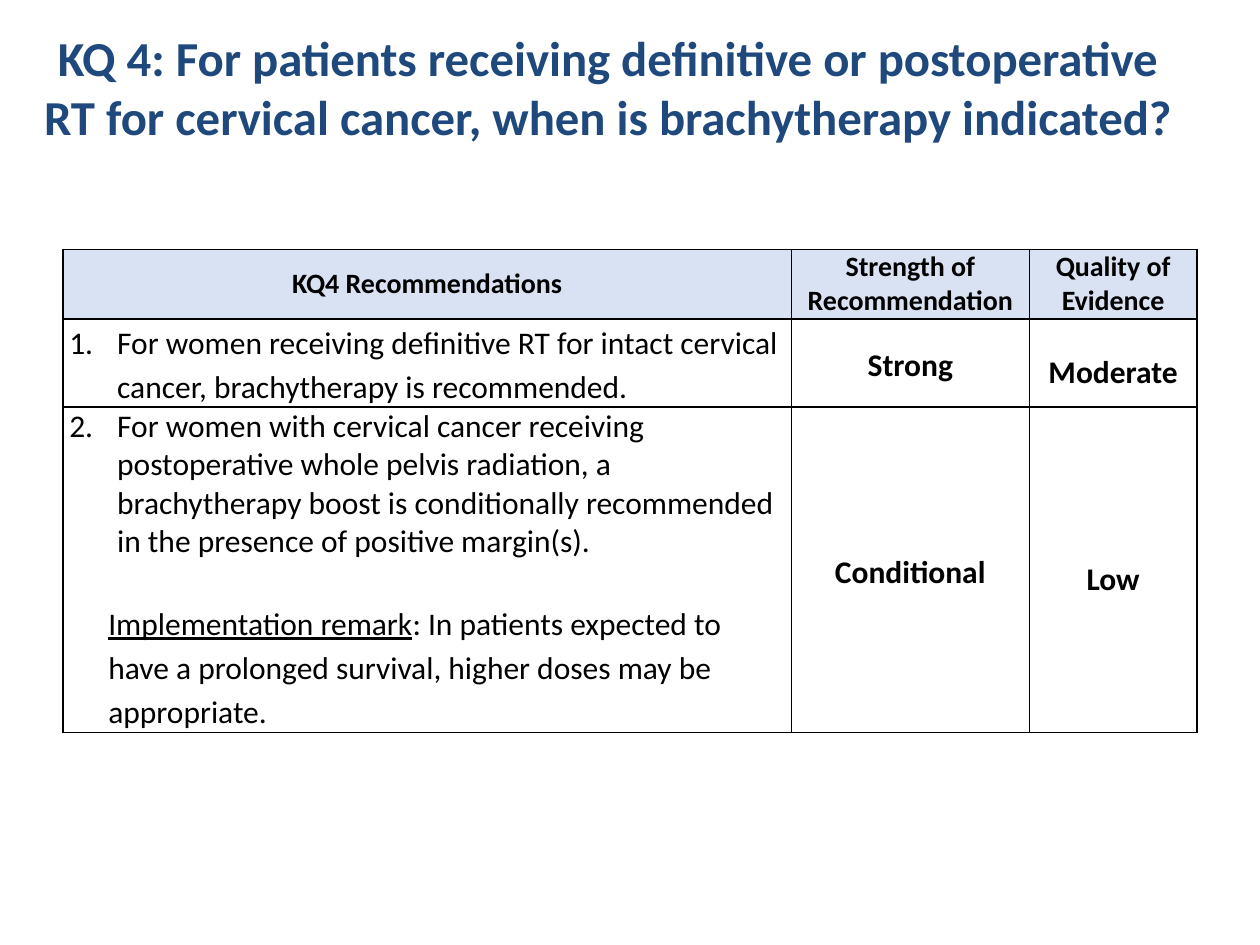
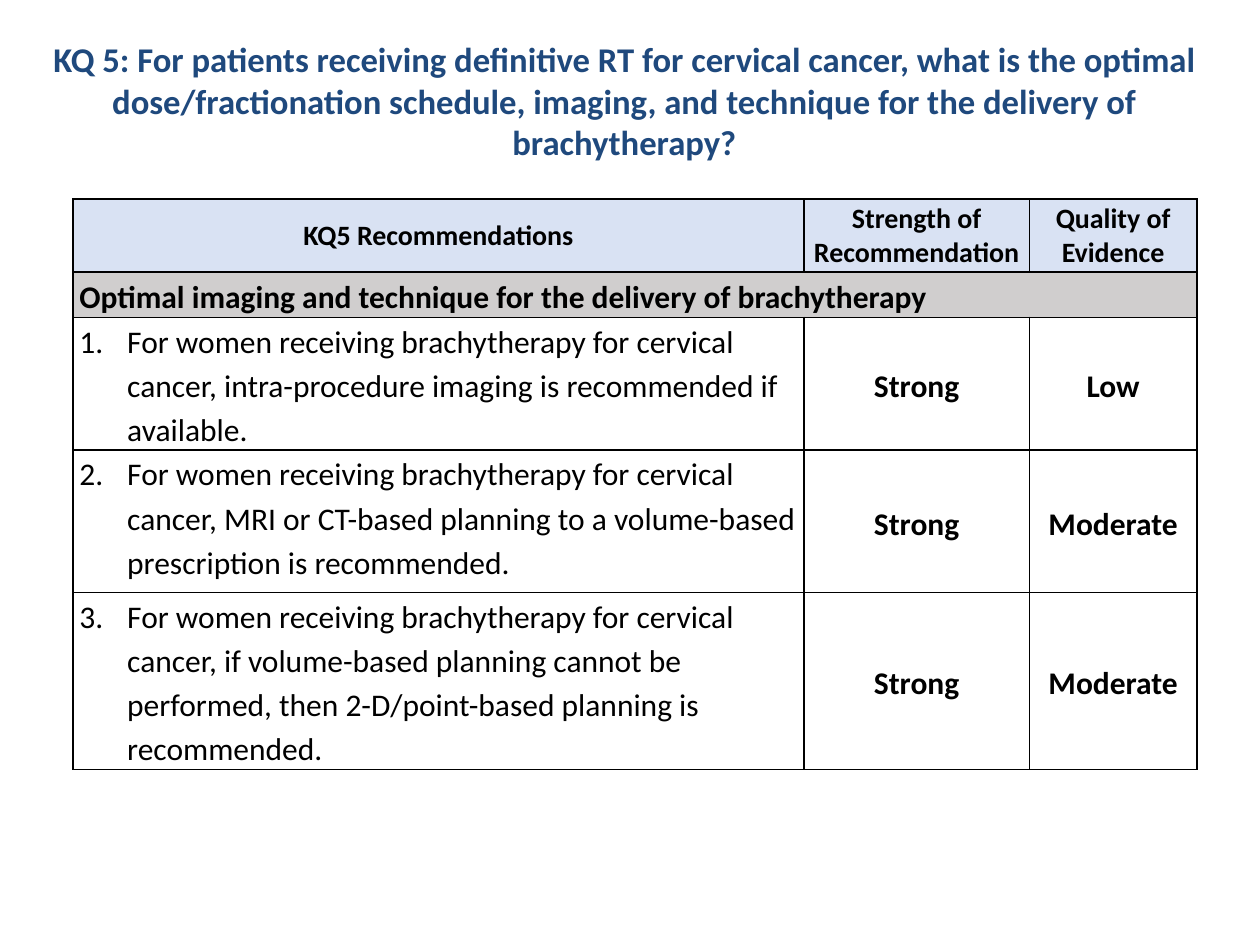
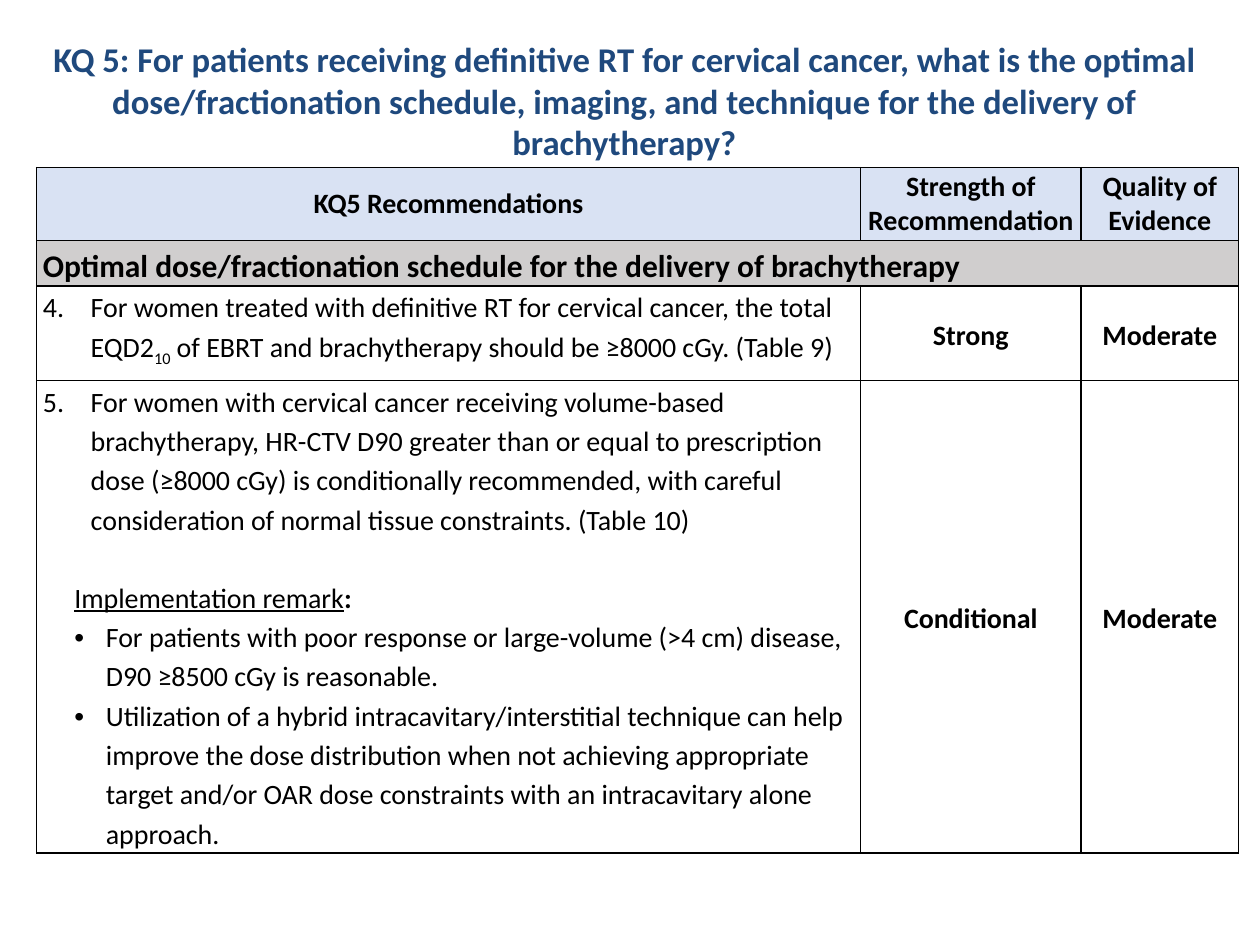
"""Build three slides of cervical cancer brachytherapy recommendations."""
import pptx
import pptx.dml.color
import pptx.enum.text
import pptx.oxml.ns
import pptx.util
from lxml import etree

Inches = pptx.util.Inches
Pt = pptx.util.Pt
RGBColor = pptx.dml.color.RGBColor
qn = pptx.oxml.ns.qn
ALIGN = pptx.enum.text.PP_ALIGN
ANCHOR = pptx.enum.text.MSO_ANCHOR

NAVY = RGBColor(0x1F, 0x49, 0x7D)
BLACK = RGBColor(0, 0, 0)
HEADER_BLUE = RGBColor(0xD9, 0xE2, 0xF3)
BAND_GREY = RGBColor(0xD0, 0xCE, 0xCE)
FONT = "Calibri"

KQ5_TITLE = ("KQ 5: For patients receiving definitive RT for cervical cancer, what is the "
             "optimal dose/fractionation schedule, imaging, and technique for the delivery "
             "of brachytherapy?")


def style_cell(cell, margin, fill=None):
    cell.margin_left = cell.margin_right = Inches(margin)
    cell.margin_top = cell.margin_bottom = 0
    tcPr = cell._tc.get_or_add_tcPr()
    for side in ("lnL", "lnR", "lnT", "lnB"):
        ln = etree.SubElement(tcPr, qn(f"a:{side}"), w=str(Pt(1)))
        solid = etree.SubElement(ln, qn("a:solidFill"))
        etree.SubElement(solid, qn("a:srgbClr"), val=str(BLACK))
    if fill is None:
        cell.fill.background()
    else:
        cell.fill.solid()
        cell.fill.fore_color.rgb = fill


def write(p, runs, size, bold=False, align=ALIGN.LEFT, spacing=1.15, color=BLACK):
    p.alignment = align
    p.line_spacing = spacing
    for text, style in runs:
        r = p.add_run()
        r.text = text
        r.font.name = FONT
        r.font.size = Pt(size)
        r.font.bold = bold or style == "bold"
        r.font.color.rgb = color
        if style == "underline":
            r.font.underline = True
        if style == "subscript":
            r._r.get_or_add_rPr().set("baseline", "-25000")


# Each paragraph: marker, left indent, hanging indent, line spacing, space before, runs.
slides = [
    {
        "title": "KQ 4: For patients receiving definitive or postoperative RT for cervical "
                 "cancer, when is brachytherapy indicated?",
        "title_at": (0.15, 0.17, 9.35, 1.82), "title_size": 27.9,
        "table_at": (0.5, 1.98), "cols": (5.78, 1.89, 1.33), "heights": (0.55, 0.7, 2.58),
        "head": "KQ4 Recommendations", "head_margin": 0.07, "band": None,
        "size": 18, "quality_spacing": 1.5,
        "rows": [
            ([(1, 0.38, 0.38, 1.15, 0, [
                ("For women receiving definitive RT for intact cervical cancer, "
                 "brachytherapy is recommended.", "")])],
             "Strong", "Moderate"),
            ([(2, 0.38, 0.38, 1, 0, [
                ("For women with cervical cancer receiving postoperative whole pelvis "
                 "radiation, a brachytherapy boost is conditionally recommended in the "
                 "presence of positive margin(s).", "")]),
              (None, 0.31, 0, 1.15, 22, [
                  ("Implementation remark", "underline"),
                  (": In patients expected to have a prolonged survival, higher doses may "
                   "be appropriate.", "")])],
             "Conditional", "Low"),
        ],
    },
    {
        "title": KQ5_TITLE, "title_at": (0.29, 0.25, 9.33, 1.82), "title_size": 19.8,
        "table_at": (0.58, 1.58), "cols": (5.8, 1.79, 1.33),
        "heights": (0.58, 0.36, 1.05, 1.13, 1.4),
        "head": "KQ5 Recommendations", "head_margin": 0.05,
        "band": "Optimal imaging and technique for the delivery of brachytherapy",
        "size": 18, "quality_spacing": 1.15,
        "rows": [
            ([(1, 0.38, 0.38, 1.15, 0, [
                ("For women receiving brachytherapy for cervical cancer, intra-procedure "
                 "imaging is recommended if available.", "")])],
             "Strong", "Low"),
            ([(2, 0.38, 0.38, 1.15, 0, [
                ("For women receiving brachytherapy for cervical cancer, MRI or CT-based "
                 "planning to a volume-based prescription is recommended.", "")])],
             "Strong", "Moderate"),
            ([(3, 0.38, 0.38, 1.15, 0, [
                ("For women receiving brachytherapy for cervical cancer, if volume-based "
                 "planning cannot be performed, then 2-D/point-based planning is "
                 "recommended.", "")])],
             "Strong", "Moderate"),
        ],
    },
    {
        "title": KQ5_TITLE, "title_at": (0.29, 0.25, 9.33, 1.82), "title_size": 19.8,
        "table_at": (0.29, 1.33), "cols": (6.54, 1.75, 1.25),
        "heights": (0.58, 0.36, 0.75, 3.75),
        "head": "KQ5 Recommendations", "head_margin": 0.05,
        "band": "Optimal dose/fractionation schedule for the delivery of brachytherapy",
        "size": 16, "quality_spacing": 1.15,
        "rows": [
            ([(4, 0.38, 0.38, 1.15, 0, [
                ("For women treated with definitive RT for cervical cancer, the total EQD2", ""),
                ("10", "subscript"),
                (" of EBRT and brachytherapy should be ≥8000 cGy. (Table 9)", "")])],
             "Strong", "Moderate"),
            ([(5, 0.38, 0.38, 1.15, 0, [
                ("For women with cervical cancer receiving volume-based brachytherapy, "
                 "HR-CTV D90 greater than or equal to prescription dose (≥8000 cGy) is "
                 "conditionally recommended, with careful consideration of normal tissue "
                 "constraints. (Table 10)", "")]),
              (None, 0.25, 0, 1.15, 22, [
                  ("Implementation remark", "underline"), (":", "bold")]),
              ("•", 0.5, 0.25, 1.15, 0, [
                  ("For patients with poor response or large-volume (>4 cm) disease, "
                   "D90 ≥8500 cGy is reasonable.", "")]),
              ("•", 0.5, 0.25, 1.15, 0, [
                  ("Utilization of a hybrid intracavitary/interstitial technique can help "
                   "improve the dose distribution when not achieving appropriate target "
                   "and/or OAR dose constraints with an intracavitary alone approach.", "")])],
             "Conditional", "Moderate"),
        ],
    },
]

prs = pptx.Presentation()
prs.slide_width, prs.slide_height = Inches(10), Inches(7.5)

for content in slides:
    s = prs.slides.add_slide(prs.slide_layouts[5])
    title = s.shapes.title
    title.left, title.top, title.width, title.height = map(Inches, content["title_at"])
    tf = title.text_frame
    tf.word_wrap = True
    tf.auto_size = pptx.enum.text.MSO_AUTO_SIZE.NONE
    tf.vertical_anchor = ANCHOR.TOP
    write(tf.paragraphs[0], [(content["title"], "")], content["title_size"], True,
          ALIGN.CENTER, 1, NAVY)

    cols, heights = content["cols"], content["heights"]
    left, top = content["table_at"]
    table = s.shapes.add_table(len(heights), len(cols), Inches(left), Inches(top),
                               Inches(sum(cols)), Inches(sum(heights))).table
    table.first_row = table.horz_banding = False
    for column, width in zip(table.columns, cols):
        column.width = Inches(width)
    for row, height in zip(table.rows, heights):
        row.height = Inches(height)

    headers = (content["head"], "Strength of Recommendation", "Quality of Evidence")
    for cell, text in zip(table.rows[0].cells, headers):
        style_cell(cell, content["head_margin"], HEADER_BLUE)
        cell.vertical_anchor = ANCHOR.MIDDLE
        write(cell.text_frame.paragraphs[0], [(text, "")], 16, True, ALIGN.CENTER, 1)

    first = 1
    if content["band"]:
        first = 2
        for cell in table.rows[1].cells:
            style_cell(cell, 0.05, BAND_GREY)
        band = table.cell(1, 0)
        band.merge(table.cell(1, 2))
        band.vertical_anchor = ANCHOR.MIDDLE
        write(band.text_frame.paragraphs[0], [(content["band"], "")], 18, True)

    size = content["size"]
    for i, (paragraphs, strength, quality) in enumerate(content["rows"], first):
        cell = table.cell(i, 0)
        style_cell(cell, 0.05)
        tf = cell.text_frame
        for j, (marker, indent, hanging, spacing, before, runs) in enumerate(paragraphs):
            p = tf.add_paragraph() if j else tf.paragraphs[0]
            pPr = p._p.get_or_add_pPr()
            pPr.set("marL", str(Inches(indent)))
            pPr.set("indent", str(-Inches(hanging)))
            if marker == "•":
                etree.SubElement(pPr, qn("a:buFont"), typeface="Arial")
                etree.SubElement(pPr, qn("a:buChar"), char=marker)
            elif marker:
                etree.SubElement(pPr, qn("a:buFont"), typeface=FONT)
                etree.SubElement(pPr, qn("a:buAutoNum"), type="arabicPeriod",
                                 startAt=str(marker))
            if before:
                p.space_before = Pt(before)
            write(p, runs, size, spacing=spacing)

        ratings = ((strength, 1.15), (quality, content["quality_spacing"]))
        for j, (text, spacing) in enumerate(ratings, 1):
            cell = table.cell(i, j)
            style_cell(cell, 0.05)
            cell.vertical_anchor = ANCHOR.MIDDLE
            write(cell.text_frame.paragraphs[0], [(text, "")], size, True, ALIGN.CENTER, spacing)

prs.save("out.pptx")
